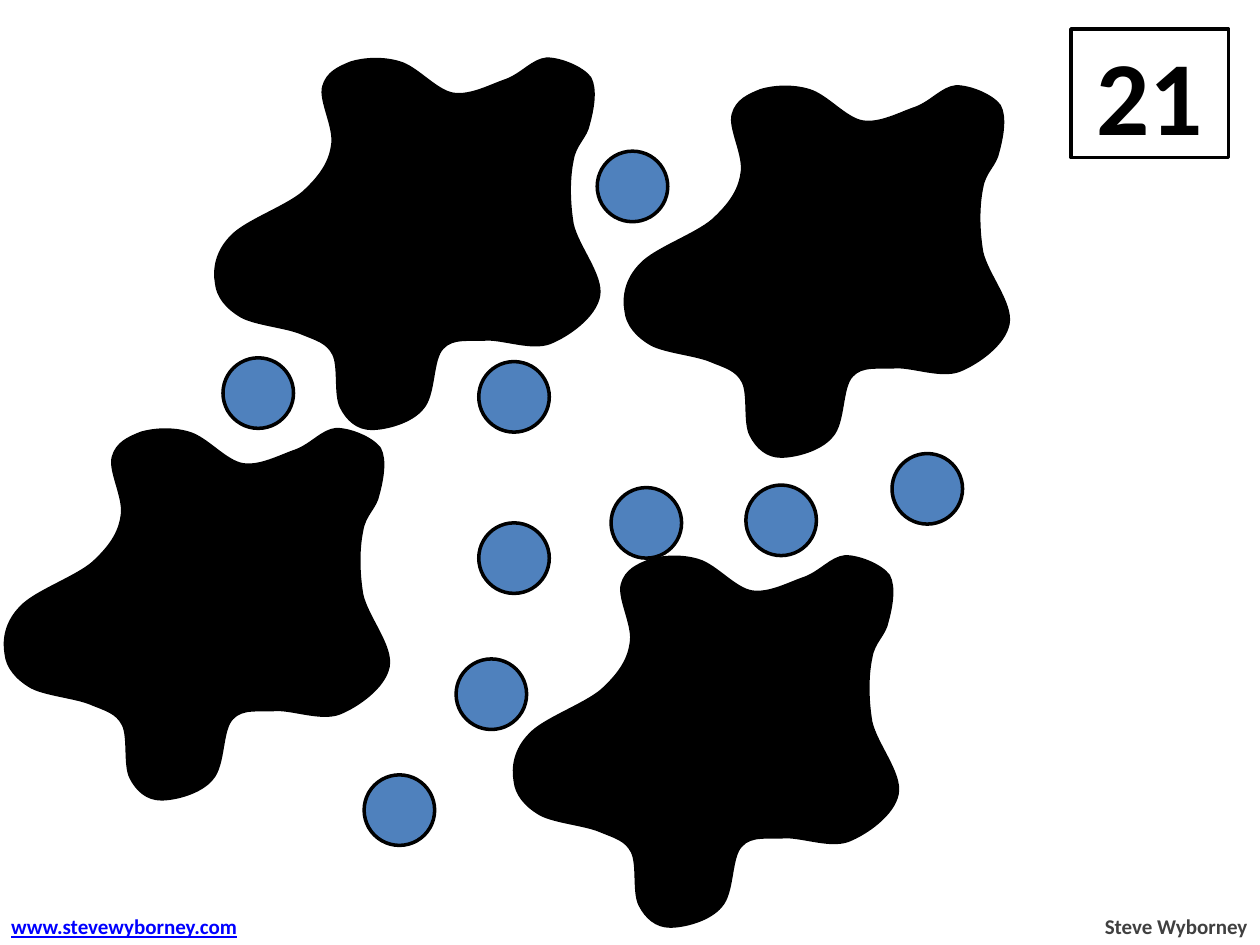
from dataclasses import dataclass

from pptx import Presentation
from pptx.dml.color import RGBColor as Rgb
from pptx.enum.shapes import MSO_SHAPE as Kind
from pptx.enum.text import MSO_ANCHOR as Anchor, MSO_AUTO_SIZE as Auto, PP_ALIGN as Align
from pptx.oxml.ns import qn
from pptx.util import Inches, Pt


@dataclass(frozen=True)
class Theme:
    font: str = "Calibri"
    ink: Rgb = Rgb(0, 0, 0)
    paper: Rgb = Rgb(255, 255, 255)
    dot: Rgb = Rgb(0x4F, 0x81, 0xBD)
    grey: Rgb = Rgb(0x40, 0x40, 0x40)
    link: Rgb = Rgb(0, 0, 255)
    big: int = 60
    small: int = 12
    edge: int = 2


THEME = Theme()
DOT = 0.56
DOTS = [(4.74, 1.2), (1.77, 2.84), (3.8, 2.87), (7.08, 3.6), (5.92, 3.85),
        (4.85, 3.87), (3.8, 4.15), (3.62, 5.23), (2.89, 6.15)]
BLOTS = [(1.7, 0.46), (4.95, 0.68), (4.07, 4.41), (0.03, 3.4)]

# Blot outline in hundredths of an inch: a start, then one Bezier curve a row
# (two control points and an end point).
START = (22, 205)
CURVES = [
    [(10, 198), (3, 189), (2, 179)],
    [(0, 168), (2, 154), (14, 142)],
    [(25, 130), (57, 119), (71, 107)],
    [(84, 95), (92, 84), (94, 70)],
    [(97, 56), (84, 34), (87, 23)],
    [(90, 12), (99, 8), (109, 4)],
    [(119, 1), (134, 0), (147, 4)],
    [(161, 8), (176, 27), (190, 29)],
    [(204, 31), (220, 22), (232, 18)],
    [(245, 13), (253, 2), (264, 1)],
    [(275, 1), (292, 8), (298, 16)],
    [(303, 25), (300, 41), (297, 52)],
    [(295, 63), (286, 68), (284, 81)],
    [(281, 95), (281, 114), (284, 132)],
    [(288, 150), (308, 173), (305, 189)],
    [(302, 205), (281, 220), (266, 226)],
    [(252, 231), (231, 223), (217, 223)],
    [(202, 224), (189, 221), (181, 230)],
    [(172, 239), (175, 267), (165, 278)],
    [(156, 289), (136, 294), (125, 294)],
    [(114, 294), (106, 287), (101, 277)],
    [(96, 267), (100, 245), (95, 235)],
    [(90, 225), (81, 223), (69, 218)],
    [(57, 213), (33, 211), START],
]


def paint(shape, fill):
    shape.shadow.inherit = False
    shape.fill.solid()
    shape.fill.fore_color.rgb = fill
    shape.line.color.rgb = THEME.ink
    shape.line.width = Pt(THEME.edge)


def write(shape, text, size, color, align):
    par = shape.text_frame.paragraphs[0]
    par.text = text
    par.alignment = align
    font = par.font
    font.name, font.size, font.bold = THEME.font, Pt(size), True
    font.color.rgb = color
    return font


def add_dot(slide, left, top):
    dot = slide.shapes.add_shape(Kind.OVAL, Inches(left), Inches(top),
                                 Inches(DOT), Inches(DOT))
    paint(dot, THEME.dot)


def bend(shape):
    """Turn each three straight segments into one Bezier curve."""
    lines = list(shape._element.iter(qn("a:lnTo")))
    for first, *rest in zip(lines[::3], lines[1::3], lines[2::3]):
        first.tag = qn("a:cubicBezTo")
        for line in rest:
            first.append(line[0])
            line.getparent().remove(line)


def add_blot(slide, left, top):
    pen = slide.shapes.build_freeform(*START, scale=Inches(0.01))
    pen.add_line_segments([point for curve in CURVES for point in curve], close=True)
    blot = pen.convert_to_shape(Inches(left), Inches(top))
    bend(blot)
    paint(blot, THEME.ink)


def add_count(slide, text):
    box = slide.shapes.add_shape(Kind.RECTANGLE, Inches(8.5), Inches(0.23),
                                 Inches(1.25), Inches(1.02))
    paint(box, THEME.paper)
    box.text_frame.vertical_anchor = Anchor.MIDDLE
    write(box, text, THEME.big, THEME.ink, Align.CENTER)


def add_note(slide, text, left, width, color, align):
    box = slide.shapes.add_textbox(Inches(left), Inches(7.2), Inches(width), Inches(0.3))
    box.text_frame.word_wrap = False
    box.text_frame.auto_size = Auto.SHAPE_TO_FIT_TEXT
    return write(box, text, THEME.small, color, align)


def main():
    deck = Presentation()
    deck.slide_width, deck.slide_height = Inches(10), Inches(7.5)
    slide = deck.slides.add_slide(deck.slide_layouts[6])
    add_count(slide, "21")
    add_note(slide, "Steve Wyborney", 8.66, 1.34, THEME.grey, Align.RIGHT)
    site = add_note(slide, "www.stevewyborney.com", -0.01, 2.05, THEME.link, Align.LEFT)
    site.underline = True
    for spot in DOTS:
        add_dot(slide, *spot)
    for spot in BLOTS:
        add_blot(slide, *spot)
    deck.save("out.pptx")


if __name__ == "__main__":
    main()
